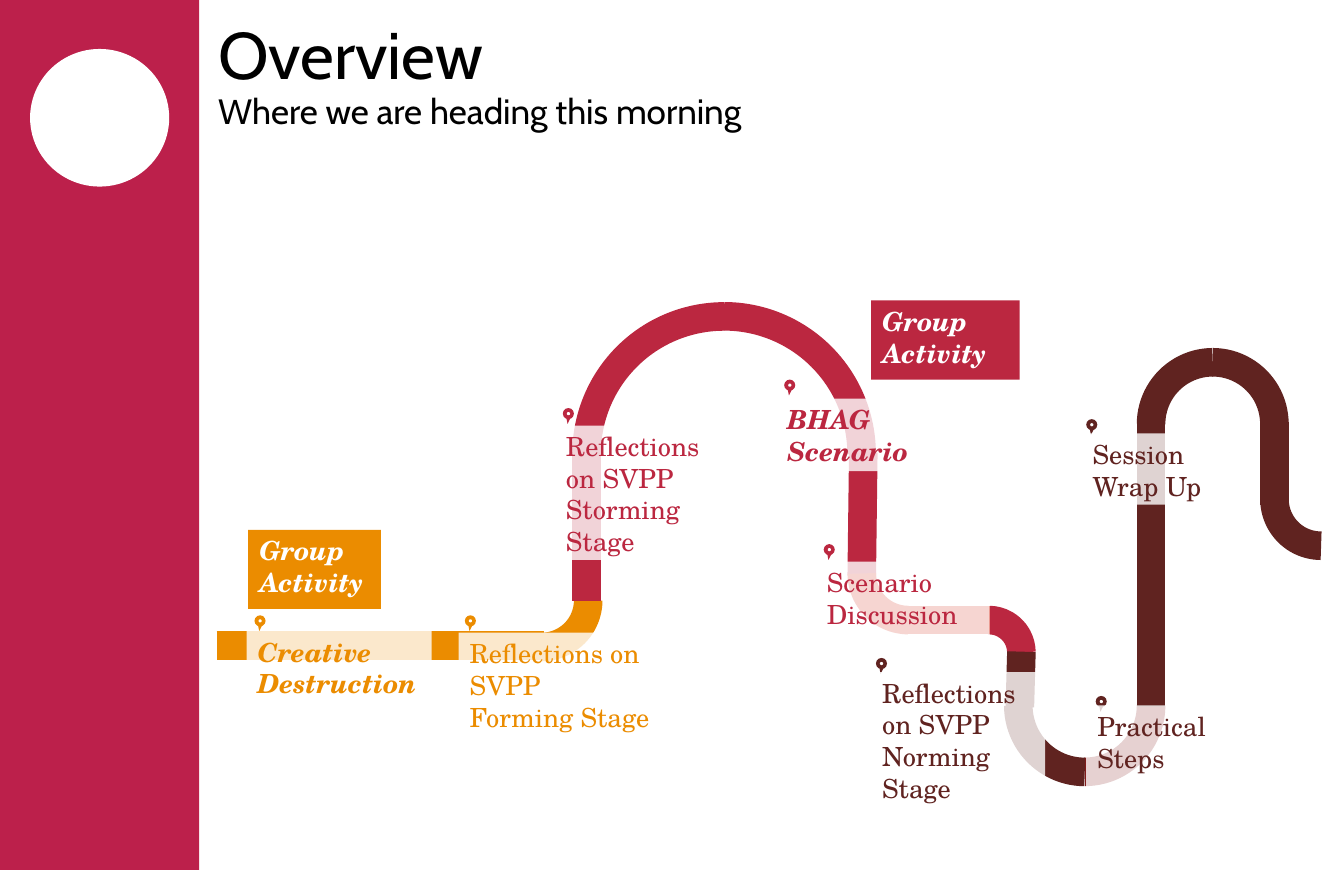
"""Build the overview slide: a winding road with labelled stops."""
from dataclasses import dataclass

import pptx
import pptx.util
import pptx.dml.color
import pptx.enum.shapes
import pptx.enum.text
import pptx.oxml
import pptx.oxml.ns
import pptx.shapes.autoshape
import pptx.shapes.base
import pptx.slide
import pptx.text.text

Inches = pptx.util.Inches
Pt = pptx.util.Pt
RGB = pptx.dml.color.RGBColor
Shape = pptx.enum.shapes.MSO_SHAPE
Slide = pptx.slide.Slide

WHITE = RGB(0xFF, 0xFF, 0xFF)
BLACK = RGB(0x00, 0x00, 0x00)
PINK = RGB(0xBC, 0x20, 0x4B)
ORANGE = RGB(0xEB, 0x8C, 0x00)
ROSE = RGB(0xBB, 0x27, 0x40)
RED = RGB(0xD6, 0x2E, 0x1C)
BROWN = RGB(0x60, 0x23, 0x20)
WINE = RGB(0x82, 0x1A, 0x1A)
ROAD = 13
PIN = 0.07
DOT = 0.02
TAIL = [(0.03, 0.1), (0.02, 0.05), (0.03, 0.05), (0.05, 0.06)]


@dataclass
class Line:
    start: tuple[float, float]
    end: tuple[float, float]
    color: RGB


@dataclass
class Bend:
    left: float
    top: float
    size: float
    turn: int
    color: RGB


@dataclass
class Box:
    left: float
    top: float
    width: float
    height: float
    text: str
    color: RGB
    bold: bool = False


@dataclass
class Stop:
    box: Box
    pin: tuple[float, float]


ROUTE = [
    Line((1.37, 4.08), (3.44, 4.08), ORANGE),
    Bend(3.13, 3.5, 0.59, 90, ORANGE),
    Line((3.71, 2.86), (3.71, 3.8), ROSE),
    Bend(3.71, 2, 1.74, 270, ROSE),
    Bend(3.71, 2, 1.74, 0, ROSE),
    Line((5.46, 2.86), (5.45, 3.64), ROSE),
    Bend(5.45, 3.33, 0.59, 180, RED),
    Bend(6.05, 3.92, 0.41, 0, ROSE),
    Line((5.73, 3.92), (6.26, 3.92), RED),
    Line((6.46, 4.12), (6.45, 4.47), BROWN),
    Bend(6.44, 4.04, 0.84, 90, WINE),
    Bend(6.44, 4.04, 0.84, 180, BROWN),
    Line((7.28, 2.67), (7.28, 4.47), BROWN),
    Bend(7.28, 2.29, 0.78, 270, BROWN),
    Bend(7.28, 2.29, 0.78, 0, BROWN),
    Line((8.06, 2.67), (8.06, 3.19), BROWN),
    Bend(8.06, 2.86, 0.59, 180, BROWN),
]

TAGS = [
    Box(5.51, 1.9, 0.94, 0.5, "Group Activity", ROSE),
    Box(1.57, 3.35, 0.84, 0.5, "Group Activity", ORANGE),
]

STOPS = [
    Stop(Box(2.9, 4, 1.28, 0.72, "Reflections on SVPP Forming Stage", ORANGE), (2.94, 3.89)),
    Stop(Box(3.51, 2.69, 1.1, 0.85, "Reflections on SVPP Storming Stage", ROSE), (3.56, 2.58)),
    Stop(Box(4.91, 2.52, 1.1, 0.46, "BHAG Scenario", ROSE, True), (4.96, 2.4)),
    Stop(Box(5.16, 3.55, 1.1, 0.48, "Scenario Discussion", ROSE), (5.21, 3.44)),
    Stop(Box(6.87, 4.46, 1.14, 0.55, "Practical Steps", BROWN), (6.93, 4.4)),
    Stop(Box(6.84, 2.74, 1.1, 0.45, "Session Wrap Up", BROWN), (6.87, 2.65)),
    Stop(Box(1.56, 3.99, 1.17, 0.46, "Creative Destruction", ORANGE, True), (1.61, 3.89)),
    Stop(Box(5.51, 4.25, 1.1, 0.87, "Reflections on SVPP Norming Stage", BROWN), (5.54, 4.16)),
]


def paint(shape: pptx.shapes.autoshape.Shape, color: RGB) -> None:
    shape.shadow.inherit = False
    shape.fill.solid()
    shape.fill.fore_color.rgb = color
    shape.line.fill.background()


def form(slide: Slide, kind: Shape, left: float, top: float, width: float,
         height: float, color: RGB) -> pptx.shapes.autoshape.Shape:
    shape = slide.shapes.add_shape(kind, Inches(left), Inches(top), Inches(width), Inches(height))
    paint(shape, color)
    return shape


def stroke(shape: pptx.shapes.base.BaseShape, color: RGB) -> None:
    shape.line.color.rgb = color
    shape.line.width = Pt(ROAD)


def draw_line(slide: Slide, line: Line) -> None:
    ends = [Inches(value) for value in (*line.start, *line.end)]
    road = slide.shapes.add_connector(pptx.enum.shapes.MSO_CONNECTOR.STRAIGHT, *ends)
    stroke(road, line.color)
    pptx.oxml.ns.qn("a:effectLst")
    road._element.spPr.append(pptx.oxml.parse_xml(
        f'<a:effectLst {pptx.oxml.ns.nsdecls("a")}/>'))


def draw_bend(slide: Slide, bend: Bend) -> None:
    arc = form(slide, Shape.ARC, bend.left, bend.top, bend.size, bend.size, bend.color)
    arc.fill.background()
    arc.rotation = bend.turn
    stroke(arc, bend.color)


def draw_box(slide: Slide, box: Box, fill: RGB, ink: RGB,
             bold: bool) -> pptx.shapes.autoshape.Shape:
    shape = form(slide, Shape.RECTANGLE, box.left, box.top, box.width, box.height, fill)
    frame = shape.text_frame
    frame.word_wrap = True
    frame.vertical_anchor = pptx.enum.text.MSO_ANCHOR.TOP
    frame.margin_left = frame.margin_right = Inches(0.07)
    frame.margin_top = frame.margin_bottom = Inches(0.03)
    frame.text = box.text
    para = frame.paragraphs[0]
    para.alignment = pptx.enum.text.PP_ALIGN.LEFT
    style(para, "TeX Gyre Schola", 12, ink)
    para.font.bold = para.font.italic = bold
    return shape


def style(para: pptx.text.text._Paragraph, name: str, size: int, color: RGB) -> None:
    para.font.name = name
    para.font.size = Pt(size)
    para.font.color.rgb = color


def draw_stop(slide: Slide, stop: Stop) -> None:
    left, top = stop.pin
    color = stop.box.color
    tail = [(Inches(left + x), Inches(top + y)) for x, y in TAIL]
    path = slide.shapes.build_freeform(*tail[0])
    path.add_line_segments(tail[1:])
    paint(path.convert_to_shape(), color)
    form(slide, Shape.OVAL, left, top, PIN, PIN, color)
    inset = (PIN - DOT) / 2
    form(slide, Shape.OVAL, left + inset, top + inset, DOT, DOT, WHITE)
    veil = draw_box(slide, stop.box, WHITE, color, stop.box.bold)
    tint = veil._element.spPr.find(".//" + pptx.oxml.ns.qn("a:srgbClr"))
    tint.append(pptx.oxml.parse_xml(
        f'<a:alpha {pptx.oxml.ns.nsdecls("a")} val="80000"/>'))


def draw_title(slide: Slide) -> None:
    title = slide.shapes.title
    title.left, title.top = Inches(1.28), Inches(0.08)
    title.width, title.height = Inches(6.99), Inches(0.82)
    frame = title.text_frame
    frame.text = "Overview\nWhere we are heading this morning"
    frame.auto_size = pptx.enum.text.MSO_AUTO_SIZE.NONE
    frame.vertical_anchor = pptx.enum.text.MSO_ANCHOR.MIDDLE
    for para, size in zip(frame.paragraphs, (30, 16)):
        para.alignment = pptx.enum.text.PP_ALIGN.LEFT
        para.line_spacing = 0.9
        para.space_before = Pt(0)
        style(para, "Cabin", size, BLACK)


def main() -> None:
    deck = pptx.Presentation()
    deck.slide_width, deck.slide_height = Inches(8.5), Inches(5.5)
    slide = deck.slides.add_slide(deck.slide_layouts[5])
    form(slide, Shape.RECTANGLE, 0, 0, 1.26, 5.5, PINK)
    form(slide, Shape.OVAL, 0.19, 0.31, 0.88, 0.87, WHITE)
    draw_title(slide)
    for part in ROUTE:
        if isinstance(part, Line):
            draw_line(slide, part)
        else:
            draw_bend(slide, part)
    for stop in STOPS:
        draw_stop(slide, stop)
    for tag in TAGS:
        draw_box(slide, tag, tag.color, WHITE, True)
    deck.save("out.pptx")


if __name__ == "__main__":
    main()
